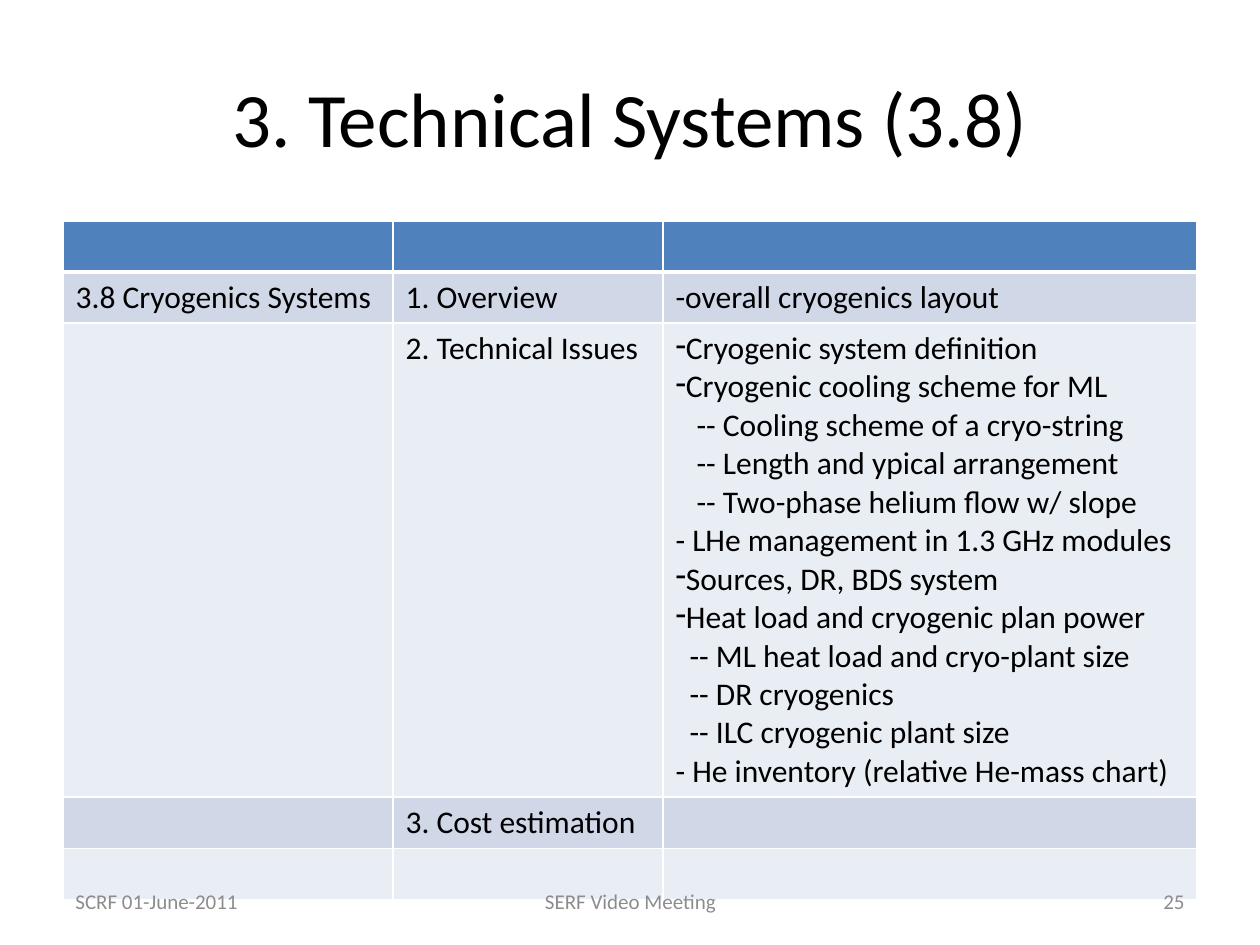
"""Build the Technical Systems (3.8) slide: title, cryogenics table and footer."""
from lxml import etree
from pptx import Presentation
from pptx.dml.color import RGBColor
from pptx.enum.text import MSO_ANCHOR, PP_ALIGN
from pptx.oxml.ns import qn
from pptx.util import Emu, Pt

LEFT, CENTER, RIGHT = PP_ALIGN.LEFT, PP_ALIGN.CENTER, PP_ALIGN.RIGHT
MIDDLE = MSO_ANCHOR.MIDDLE
PX = 914400 / 126

THEME = {
    "font": "Calibri",
    "title": (44, "000000"),
    "body": (18, "000000"),
    "footer": (12, "8C8C8C"),
    "header": "4F81BD",
    "bands": ("D0D8E8", "E9EDF4"),
    "border": "FFFFFF",
}

TEXTS = [
    ("3. Technical Systems (3.8)", "title", CENTER, (63, 38, 1134, 157)),
    ("SCRF 01-June-2011", "footer", LEFT, (63, 876, 294, 50)),
    ("SERF Video Meeting", "footer", CENTER, (431, 876, 399, 50)),
    ("25", "footer", RIGHT, (903, 876, 294, 50)),
]

ISSUES = [
    ("Cryogenic system definition", "-", 0),
    ("Cryogenic cooling scheme for ML", "-", 0),
    ("-- Cooling scheme of a cryo-string", None, 21),
    ("-- Length and ypical arrangement", None, 21),
    ("-- Two-phase helium flow w/ slope", None, 21),
    ("- LHe management in 1.3 GHz modules", None, 0),
    ("Sources, DR, BDS system", "-", 0),
    ("Heat load and cryogenic plan power", "-", 0),
    ("-- ML heat load and cryo-plant size", None, 14),
    ("-- DR cryogenics", None, 14),
    ("-- ILC cryogenic plant size", None, 14),
    ("- He inventory (relative He-mass chart)", None, 0),
]

ROWS = [
    ["", "", ""],
    ["3.8 Cryogenics Systems", "1. Overview", "-overall cryogenics layout"],
    ["", "2. Technical Issues", ISSUES],
    ["", "3. Cost estimation", ""],
    ["", "", ""],
]
TABLE_AT = (63, 221)
COL_WIDTHS = (330, 270, 534)
ROW_HEIGHTS = (51, 51, 474, 51, 51)


def px(n):
    return Emu(round(n * PX))


def style(font, role):
    size, color = THEME[role]
    for name, value in {"name": THEME["font"], "size": Pt(size)}.items():
        setattr(font, name, value)
    font.color.rgb = RGBColor.from_string(color)


def add_text(s, text, role, align, box):
    tf = s.shapes.add_textbox(*map(px, box)).text_frame
    tf.word_wrap = True
    tf.vertical_anchor = MIDDLE
    p = tf.paragraphs[0]
    p.alignment = align
    r = p.add_run()
    r.text = text
    style(r.font, role)


def add_borders(cell, bottom):
    tcPr = cell._tc.get_or_add_tcPr()
    for tag, width in (("lnL", 1), ("lnR", 1), ("lnT", 1), ("lnB", bottom)):
        ln = etree.SubElement(tcPr, qn(f"a:{tag}"), w=str(Pt(width)))
        fill = etree.SubElement(ln, qn("a:solidFill"))
        etree.SubElement(fill, qn("a:srgbClr"), val=THEME["border"])


def fill_cell(cell, content, color, bottom):
    add_borders(cell, bottom)
    cell.fill.solid()
    cell.fill.fore_color.rgb = RGBColor.from_string(color)
    lines = [(content, None, 0)] if isinstance(content, str) else content
    tf = cell.text_frame
    for i, (text, bullet, indent) in enumerate(lines):
        p = tf.paragraphs[0] if i == 0 else tf.add_paragraph()
        style(p.font, "body")
        pPr = p._p.get_or_add_pPr()
        pPr.set("marL", str(px(indent)))
        pPr.set("indent", "0")
        if bullet:
            bu = etree.Element(qn("a:buChar"), char=bullet)
            pPr.insert(0, bu)
        if text:
            r = p.add_run()
            r.text = text
            style(r.font, "body")


def add_grid(s):
    size = (sum(COL_WIDTHS), sum(ROW_HEIGHTS))
    table = s.shapes.add_table(
        len(ROWS), len(COL_WIDTHS), *map(px, TABLE_AT + size)).table
    for col, width in zip(table.columns, COL_WIDTHS):
        col.width = px(width)
    for i, (row, height) in enumerate(zip(ROWS, ROW_HEIGHTS)):
        table.rows[i].height = px(height)
        color = THEME["bands"][(i - 1) % 2] if i else THEME["header"]
        for j, content in enumerate(row):
            fill_cell(table.cell(i, j), content, color, 1 if i else 3)


def main():
    prs = Presentation()
    prs.slide_width, prs.slide_height = px(1260), px(945)
    s = prs.slides.add_slide(prs.slide_layouts[6])
    add_grid(s)
    for item in TEXTS:
        add_text(s, *item)
    prs.save("out.pptx")


if __name__ == "__main__":
    main()
